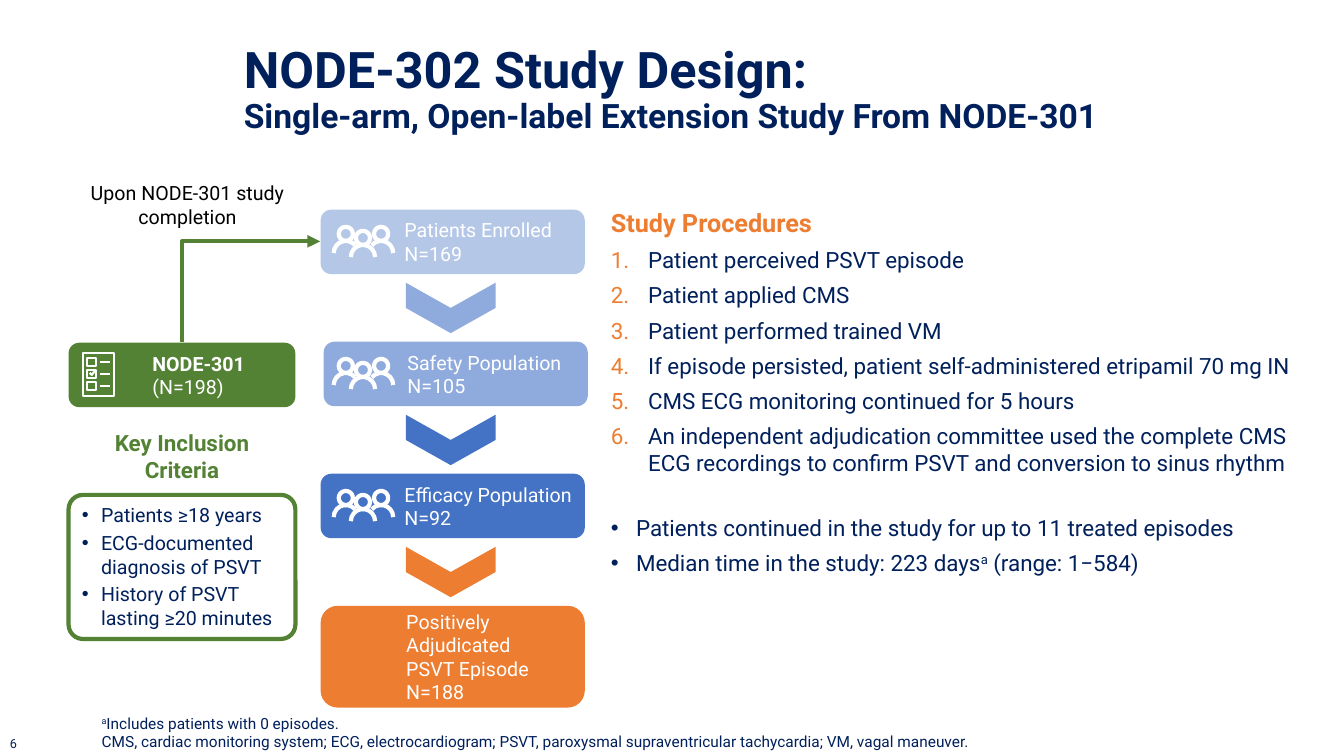
from math import cos, radians, sin

from lxml.etree import SubElement
from pptx import Presentation
from pptx.dml.color import RGBColor
from pptx.enum.shapes import MSO_CONNECTOR, MSO_SHAPE
from pptx.enum.text import MSO_ANCHOR, PP_ALIGN
from pptx.oxml.ns import qn
from pptx.util import Inches, Pt

COLORS = {
    "navy": "00205C", "green": "548235", "orange": "ED7D31", "white": "FFFFFF",
    "black": "000000", "pale": "B4C7E7", "light": "8FAADC", "blue": "4472C4",
}

deck = Presentation()
deck.slide_width, deck.slide_height = Inches(13.33), Inches(7.5)
slide = deck.slides.add_slide(deck.slide_layouts[6])
shapes = slide.shapes


def write(shape, lines, size, color, bold=False, align=PP_ALIGN.LEFT):
    """Fill a shape with one paragraph per line and return its paragraphs."""
    frame = shape.text_frame
    frame.word_wrap = True
    frame.text = "\n".join(lines)
    for para in frame.paragraphs:
        para.alignment = align
        for run in para.runs:
            run.font.name, run.font.size, run.font.bold = "Roboto", Pt(size), bold
            run.font.color.rgb = RGBColor.from_string(COLORS[color])
    return frame.paragraphs


def paint(shape, fill=None, line=None, width=1):
    """Set fill and outline, each left out if no colour is given."""
    shape.shadow.inherit = False
    if fill:
        shape.fill.solid()
        shape.fill.fore_color.rgb = RGBColor.from_string(COLORS[fill])
    else:
        shape.fill.background()
    if line:
        shape.line.color.rgb = RGBColor.from_string(COLORS[line])
        shape.line.width = Pt(width)
    else:
        shape.line.fill.background()


# Title and plain labels
labels = {}
for name, box, lines, size, color, bold, align in [
    ("title", (2.32, 0.4, 10.1, 1.45),
     ["NODE-302 Study Design:\vSingle-arm, Open-label Extension Study From NODE-301"],
     36, "navy", True, PP_ALIGN.LEFT),
    ("criteria", (0.83, 4.21, 1.95, 0.64), ["Key Inclusion Criteria"],
     16, "green", True, PP_ALIGN.CENTER),
    ("source", (0.65, 1.75, 2.42, 0.57), ["Upon NODE-301 study completion"],
     14, "black", False, PP_ALIGN.CENTER),
    ("notes", (0.91, 7.03, 9.34, 0.47),
     ["aIncludes patients with 0 episodes.",
      "CMS, cardiac monitoring system; ECG, electrocardiogram; PSVT, paroxysmal "
      "supraventricular tachycardia; VM, vagal maneuver."],
     11, "navy", False, PP_ALIGN.LEFT),
    ("number", (0, 7.25, 0.27, 0.25), ["6"], 9, "navy", False, PP_ALIGN.LEFT),
    ("steps", (5.96, 2.01, 7, 3.5),
     ["Study Procedures", "Patient perceived PSVT episode", "Patient applied CMS",
      "Patient performed trained VM",
      "If episode persisted, patient self-administered etripamil 70 mg IN",
      "CMS ECG monitoring continued for 5 hours",
      "An independent adjudication committee used the complete CMS ECG recordings "
      "to confirm PSVT and conversion to sinus rhythm"],
     16, "navy", False, PP_ALIGN.LEFT),
    ("facts", (5.96, 5.05, 7.18, 1.26),
     ["Patients continued in the study for up to 11 treated episodes",
      "Median time in the study: 223 daysa (range: 1−584)"],
     16, "navy", False, PP_ALIGN.LEFT),
]:
    label = shapes.add_textbox(*map(Inches, box))
    write(label, lines, size, color, bold, align)
    labels[name] = label.text_frame

title = labels["title"].paragraphs[0]
title.line_spacing = 0.9
title.runs[1].font.size = Pt(24)
labels["notes"].vertical_anchor = MSO_ANCHOR.BOTTOM
labels["number"].word_wrap = False
head = labels["steps"].paragraphs[0].runs[0].font
head.size, head.bold = Pt(18), True
head.color.rgb = RGBColor.from_string(COLORS["orange"])

# Raised footnote marks
for name, row, parts in [
    ("notes", 0, ["a", "Includes patients with 0 episodes."]),
    ("facts", 1, ["Median time in the study: 223 days", "a", " (range: 1−584)"]),
]:
    para = labels[name].paragraphs[row]
    size = para.runs[0].font.size
    para.text = ""
    for part in parts:
        run = para.add_run()
        run.text = part
        run.font.name, run.font.size = "Roboto", size
        run.font.color.rgb = RGBColor.from_string(COLORS["navy"])
        if part == "a":
            run.font._element.set("baseline", "30000")

# Population boxes and chevrons
first, pitch = 2.08, 1.31
groups = [
    (3.18, 0.64, "pale", ["Patients Enrolled", "N=169"]),
    (3.21, 0.64, "light", ["Safety Population", "N=105"]),
    (3.18, 0.64, "blue", ["Efficacy Population", "N=92"]),
    (3.18, 1.01, "orange", ["Positively Adjudicated\vPSVT Episode", "N=188"]),
]
cards = [(left, first + i * pitch, 2.62, high, color, lines)
         for i, (left, high, color, lines) in enumerate(groups)]
cards.append((0.68, 3.4, 2.25, 0.64, "green", ["NODE-301", "(N=198)"]))
for left, top, wide, high, color, lines in cards:
    card = shapes.add_shape(MSO_SHAPE.ROUNDED_RECTANGLE, *map(Inches, (left, top, wide, high)))
    paint(card, color)
    rows = write(card, lines, 14, "white")
    frame = card.text_frame
    frame.margin_left, frame.margin_right = Inches(0.8), 0
    frame.vertical_anchor = MSO_ANCHOR.MIDDLE
rows[0].runs[0].font.bold = True

for i, (_, _, color, _) in enumerate(groups[1:]):
    arrow = shapes.add_shape(MSO_SHAPE.CHEVRON, Inches(4.22), Inches(2.61 + i * pitch),
                             Inches(0.5), Inches(0.89))
    arrow.rotation = 90
    paint(arrow, color)

# Icons: each a list of strokes, given as points and whether they close
icons = []
for i in range(3):
    trio = []
    for x, y, start, end in [(3.43, 0.24, 180, 40), (3.6, 0.28, 180, 0), (3.78, 0.24, 140, 0)]:
        y += first + i * pitch
        for drop, size, a, b, closed in [(0, 0.07, 360, 20, True), (0.19, 0.12, start, end, False)]:
            trio.append(([(x + size * cos(radians(t)), y + drop - size * sin(radians(t)))
                          for t in range(a, b - 1, -20)], closed))
    icons.append((trio, 3))

sheet = [([(0.89, 3.7), (0.91, 3.72), (0.95, 3.67)], False)]
boxes = [(0.82, 3.5, 1.13, 3.93)]
for i in range(3):
    y = 3.59 + i * 0.12
    boxes.append((0.86, y - 0.04, 0.95, y + 0.04))
    sheet.append(([(0.99, y), (1.09, y)], False))
sheet += [([(l, t), (r, t), (r, b), (l, b)], True) for l, t, r, b in boxes]
icons.append((sheet, 1.5))

for strokes, width in icons:
    pen = shapes.build_freeform()
    for points, closed in strokes:
        points = [(Inches(x), Inches(y)) for x, y in points]
        pen.move_to(*points[0])
        pen.add_line_segments(points[1:], close=closed)
    # The pen's unused start point is dropped by starting on the first stroke
    start = [(Inches(x), Inches(y)) for x, y in strokes[0][0]]
    pen = shapes.build_freeform(*start[0])
    pen.add_line_segments(start[1:], close=strokes[0][1])
    for points, closed in strokes[1:]:
        points = [(Inches(x), Inches(y)) for x, y in points]
        pen.move_to(*points[0])
        pen.add_line_segments(points[1:], close=closed)
    paint(pen.convert_to_shape(), None, "white", width)

# Inclusion criteria
panel = shapes.add_shape(MSO_SHAPE.ROUNDED_RECTANGLE, Inches(0.68), Inches(4.91),
                         Inches(2.25), Inches(1.43))
panel.adjustments[0] = 0.1
paint(panel, None, "green", 3)
write(panel, ["Patients ≥18 years", "ECG-documented diagnosis of PSVT",
              "History of PSVT lasting ≥20 minutes"], 14, "navy")
frame = panel.text_frame
frame.margin_left = frame.margin_right = Inches(0.09)
frame.margin_top = frame.margin_bottom = Inches(0.04)
frame.vertical_anchor = MSO_ANCHOR.TOP

# Bullets and numbers
steps, facts = labels["steps"].paragraphs, labels["facts"].paragraphs
steps[0].space_after = Pt(6)
for paras, indent, after, color, face, tag, key, mark in [
    (frame.paragraphs, 0.19, 3, "navy", "Arial", "a:buChar", "char", "•"),
    (steps[1:], 0.37, 6, "orange", "Roboto", "a:buAutoNum", "type", "arabicPeriod"),
    (facts, 0.25, 6, "navy", "Arial", "a:buChar", "char", "•"),
]:
    for para in paras:
        para.space_after = Pt(after)
        props = para._p.get_or_add_pPr()
        props.set("marL", str(Inches(indent)))
        props.set("indent", str(-Inches(indent)))
        tint = SubElement(props, qn("a:buClr"))
        SubElement(tint, qn("a:srgbClr")).set("val", COLORS[color])
        SubElement(props, qn("a:buFont")).set("typeface", face)
        SubElement(props, qn(tag)).set(key, mark)

# Elbow arrow from NODE-301 to the enrolled patients, turned a quarter
link = shapes.add_connector(MSO_CONNECTOR.ELBOW, Inches(2.99), Inches(3.58),
                            Inches(1.99), Inches(2.21))
link.line.color.rgb = RGBColor.from_string(COLORS["green"])
link.line.width = Pt(3)
props = link._element.spPr
props.find(qn("a:xfrm")).set("rot", "5400000")
props.find(qn("a:prstGeom")).set("prst", "bentConnector2")
SubElement(link.line._get_or_add_ln(), qn("a:tailEnd")).set("type", "triangle")
SubElement(props, qn("a:effectLst"))

deck.save("out.pptx")
